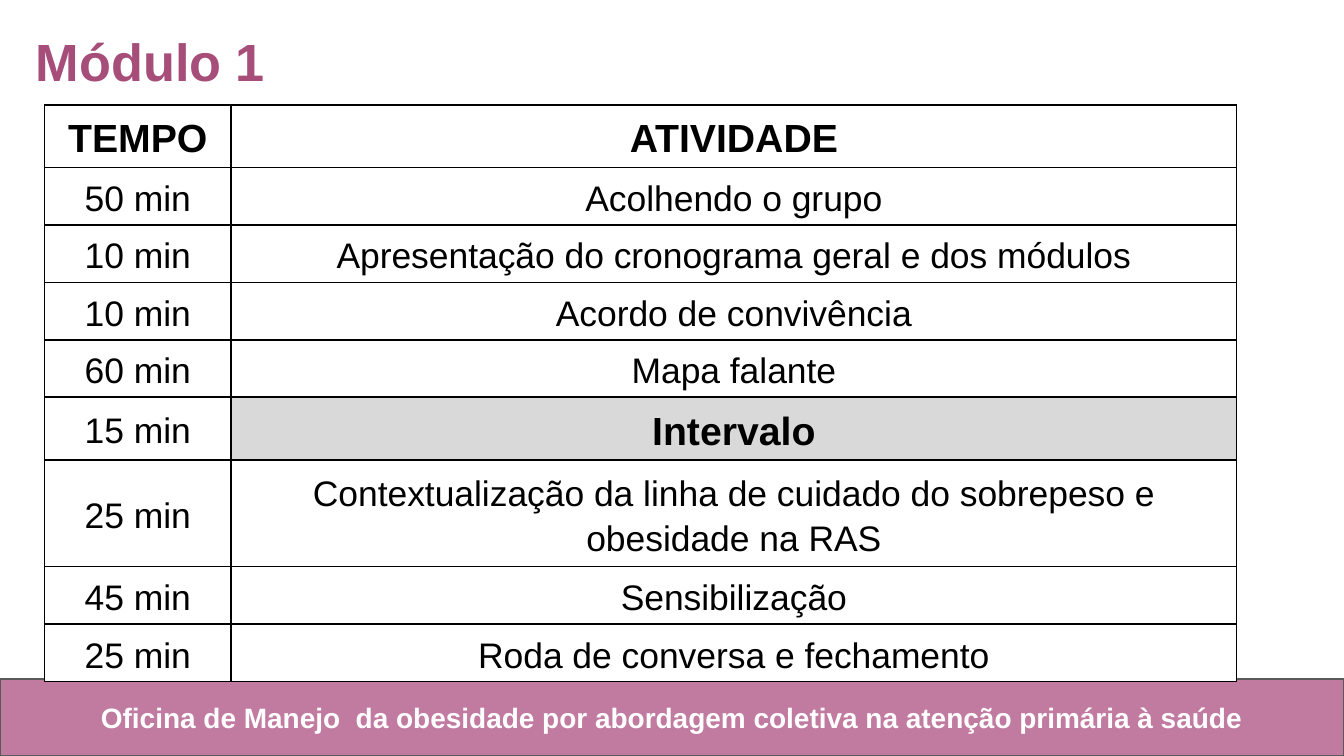
from lxml.etree import SubElement as Sub
from pptx import Presentation
from pptx.dml.color import RGBColor
from pptx.enum.shapes import MSO_SHAPE as Shape
from pptx.enum.text import MSO_ANCHOR as Anchor, MSO_AUTO_SIZE as Fit, PP_ALIGN as Align
from pptx.oxml.ns import qn
from pptx.util import Cm, Pt

BLACK = RGBColor(0x00, 0x00, 0x00)
WHITE = RGBColor(0xFF, 0xFF, 0xFF)
GREY = RGBColor(0xD9, 0xD9, 0xD9)
EDGE = RGBColor(0x59, 0x59, 0x59)
PINK = RGBColor(0xC2, 0x7B, 0xA0)
PLUM = RGBColor(0xA6, 0x4D, 0x79)

TITLE = "Módulo 1"
FOOTER = "Oficina de Manejo  da obesidade por abordagem coletiva na atenção primária à saúde"
BREAK = "Intervalo"
# time, activity, row height in cm
ROWS = [
    ("TEMPO", "ATIVIDADE", 1.09),
    ("50 min", "Acolhendo o grupo", 0.99),
    ("10 min", "Apresentação do cronograma geral e dos módulos", 0.99),
    ("10 min", "Acordo de convivência", 0.99),
    ("60 min", "Mapa falante", 0.99),
    ("15 min", BREAK, 1.19),
    ("25 min", "Contextualização da linha de cuidado do sobrepeso e obesidade na RAS", 1.85),
    ("45 min", "Sensibilização", 0.99),
    ("25 min", "Roda de conversa e fechamento", 0.99),
]
COLS = (3.53, 19)


def write(frame, text, size, color, bold, align, space=1.15):
    frame.text = text
    frame.word_wrap = True
    para = frame.paragraphs[0]
    para.alignment = align
    para.line_spacing = space
    font = para.runs[0].font
    font.name, font.size, font.bold = "Arial", Pt(size), bold
    font.color.rgb = color


def pad(frame, gap):
    frame.margin_left = frame.margin_right = gap
    frame.margin_top = frame.margin_bottom = gap


def add_title(slide, box):
    title = slide.shapes.title
    title.left, title.top, title.width, title.height = box
    frame = title.text_frame
    write(frame, TITLE, 28, PLUM, True, Align.LEFT)
    frame.auto_size = Fit.NONE
    frame.vertical_anchor = Anchor.BOTTOM
    pad(frame, Cm(0.25))


def add_footer(slide, box):
    left, top, width, height = box
    band = slide.shapes.add_shape(Shape.RECTANGLE, *box)
    band.shadow.inherit = False
    band.fill.solid()
    band.fill.fore_color.rgb = PINK
    band.line.color.rgb = EDGE
    band.line.width = Pt(0.75)
    side, inset = Cm(0.86), Cm(0.15)
    label = slide.shapes.add_textbox(
        left + side, top + inset, width - 2 * side, height - 2 * inset)
    write(label.text_frame, FOOTER, 15, WHITE, True, Align.CENTER, 1.0)
    pad(label.text_frame, Cm(0.25))


def add_borders(cell):
    props = cell._tc.get_or_add_tcPr()
    for side, tag in enumerate(("a:lnL", "a:lnR", "a:lnT", "a:lnB")):
        line = props.makeelement(qn(tag), {"w": str(Pt(1))})
        fill = Sub(line, qn("a:solidFill"))
        Sub(fill, qn("a:srgbClr"), val=str(BLACK))
        props.insert(side, line)


def add_agenda(slide, box):
    table = slide.shapes.add_table(len(ROWS), len(COLS), *box).table
    for col, width in zip(table.columns, COLS):
        col.width = Cm(width)
    for r, (*texts, height) in enumerate(ROWS):
        table.rows[r].height = Cm(height)
        for c, text in enumerate(texts):
            cell = table.cell(r, c)
            bold = r == 0 or text == BREAK
            write(cell.text_frame, text, 21 if bold else 19, BLACK, bold, Align.CENTER)
            cell.vertical_anchor = Anchor.MIDDLE
            pad(cell, Cm(0.08))
            cell.fill.solid()
            cell.fill.fore_color.rgb = GREY if text == BREAK else WHITE
            add_borders(cell)


def main():
    deck = Presentation()
    deck.slide_width, deck.slide_height = Cm(25.4), Cm(14.28)
    slide = deck.slides.add_slide(deck.slide_layouts[5])
    band = Cm(1.45)
    add_footer(slide, (0, deck.slide_height - band, deck.slide_width, band))
    high = sum(row[2] for row in ROWS)
    add_agenda(slide, (Cm(0.84), Cm(1.98), Cm(sum(COLS)), Cm(high)))
    add_title(slide, (Cm(0.43), Cm(0.1), Cm(6.1), Cm(1.88)))
    deck.save("out.pptx")


if __name__ == "__main__":
    main()
